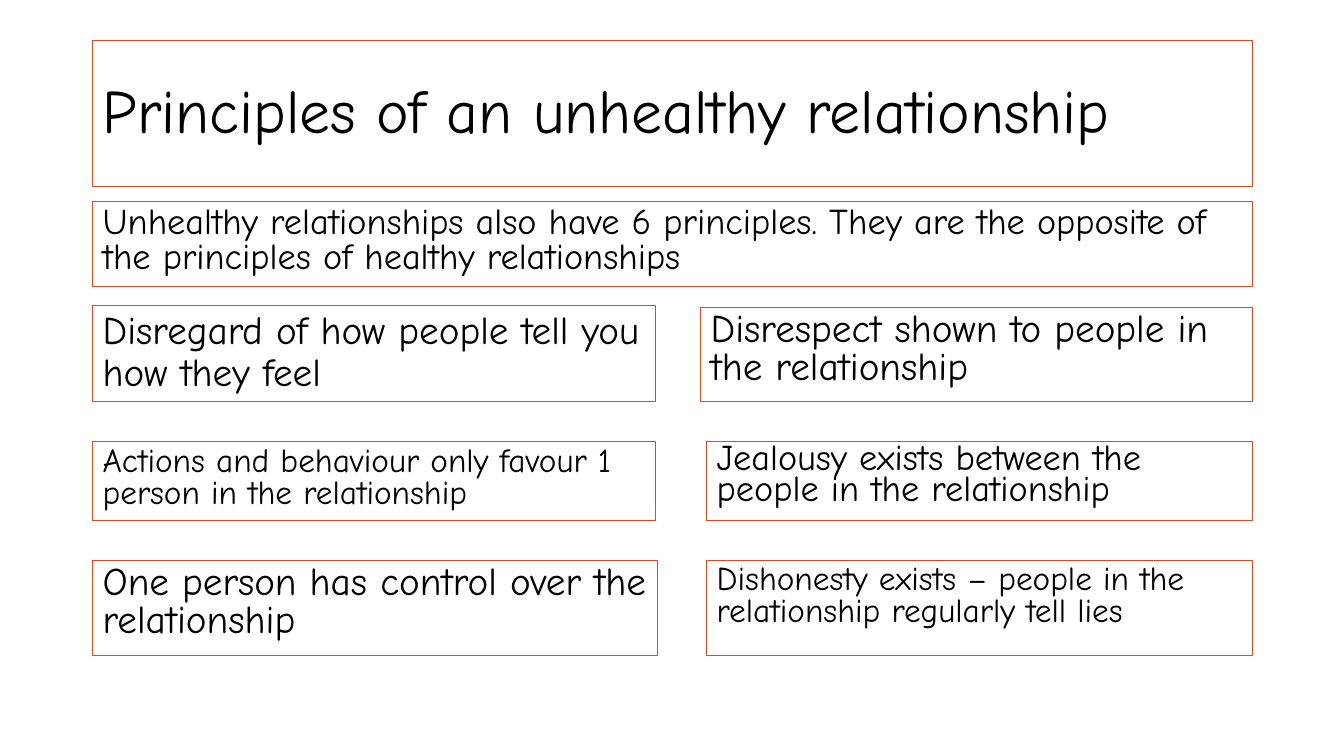
from pptx import Presentation
from pptx.dml.color import RGBColor
from pptx.enum.text import MSO_ANCHOR
from pptx.util import Inches, Pt

FONT = "Comic Neue"
TEXT_COLOR = "000000"
BORDER_COLOR = "E74519"
LEFT, FULL_WIDTH = 0.92, 11.5
RIGHT_EDGE = LEFT + FULL_WIDTH

# Each row: top of the left box, bottom of the row, then for both boxes
# (text, size, line spacing), the left box's width, the right box's offset
# from the left margin and its drop below the row's top.
PRINCIPLE_ROWS = [
    (3.03, 3.98,
     ("Disregard of how people tell you how they feel", 28, 0.9),
     ("Disrespect shown to people in the relationship", 28, 0.8),
     5.58, 6.03, 0.02),
    (4.38, 5.16,
     ("Actions and behaviour only favour 1 person in the relationship", 23.8, 0.8),
     ("Jealousy exists between the people in the relationship", 25.9, 0.7),
     5.58, 6.09, 0),
    (5.56, 6.5,
     ("One person has control over the relationship", 28, 0.8),
     ("Dishonesty exists – people in the relationship regularly tell lies", 23.8, 0.8),
     5.6, 6.09, 0),
]


def rgb(hex_color):
    return RGBColor.from_string(hex_color)


def add_bordered_text(slide, box, text, size, line_spacing,
                      space_before=10, anchor=MSO_ANCHOR.TOP):
    """Add one outlined text box; box is left, top, width, height in inches."""
    panel = slide.shapes.add_textbox(*(Inches(length) for length in box))
    panel.line.color.rgb = rgb(BORDER_COLOR)
    panel.line.width = Pt(0.75)
    frame = panel.text_frame
    frame.word_wrap = True
    frame.vertical_anchor = anchor
    frame.text = text
    paragraph = frame.paragraphs[0]
    paragraph.line_spacing = line_spacing
    paragraph.space_before = Pt(space_before)
    font = paragraph.runs[0].font
    font.name = FONT
    font.size = Pt(size)
    font.color.rgb = rgb(TEXT_COLOR)


def add_heading(slide, left, top, width):
    add_bordered_text(slide, (left, top, width, 1.45),
                      "Principles of an unhealthy relationship", 44, 0.9,
                      space_before=0, anchor=MSO_ANCHOR.MIDDLE)
    add_bordered_text(slide, (left, top + 1.6, width, 0.84),
                      "Unhealthy relationships also have 6 principles. They are "
                      "the opposite of the principles of healthy relationships",
                      25.9, 0.8)


def add_principle_row(slide, top, bottom, first, second,
                      first_width, second_offset, second_drop):
    add_bordered_text(slide, (LEFT, top, first_width, bottom - top), *first)
    second_left = LEFT + second_offset
    second_top = top + second_drop
    add_bordered_text(slide, (second_left, second_top,
                              RIGHT_EDGE - second_left, bottom - second_top),
                      *second)


def main():
    deck = Presentation()
    deck.slide_width, deck.slide_height = Inches(13.33), Inches(7.5)
    slide = deck.slides.add_slide(deck.slide_layouts[6])
    add_heading(slide, LEFT, 0.4, FULL_WIDTH)
    for row in PRINCIPLE_ROWS:
        add_principle_row(slide, *row)
    deck.save("out.pptx")


if __name__ == "__main__":
    main()
